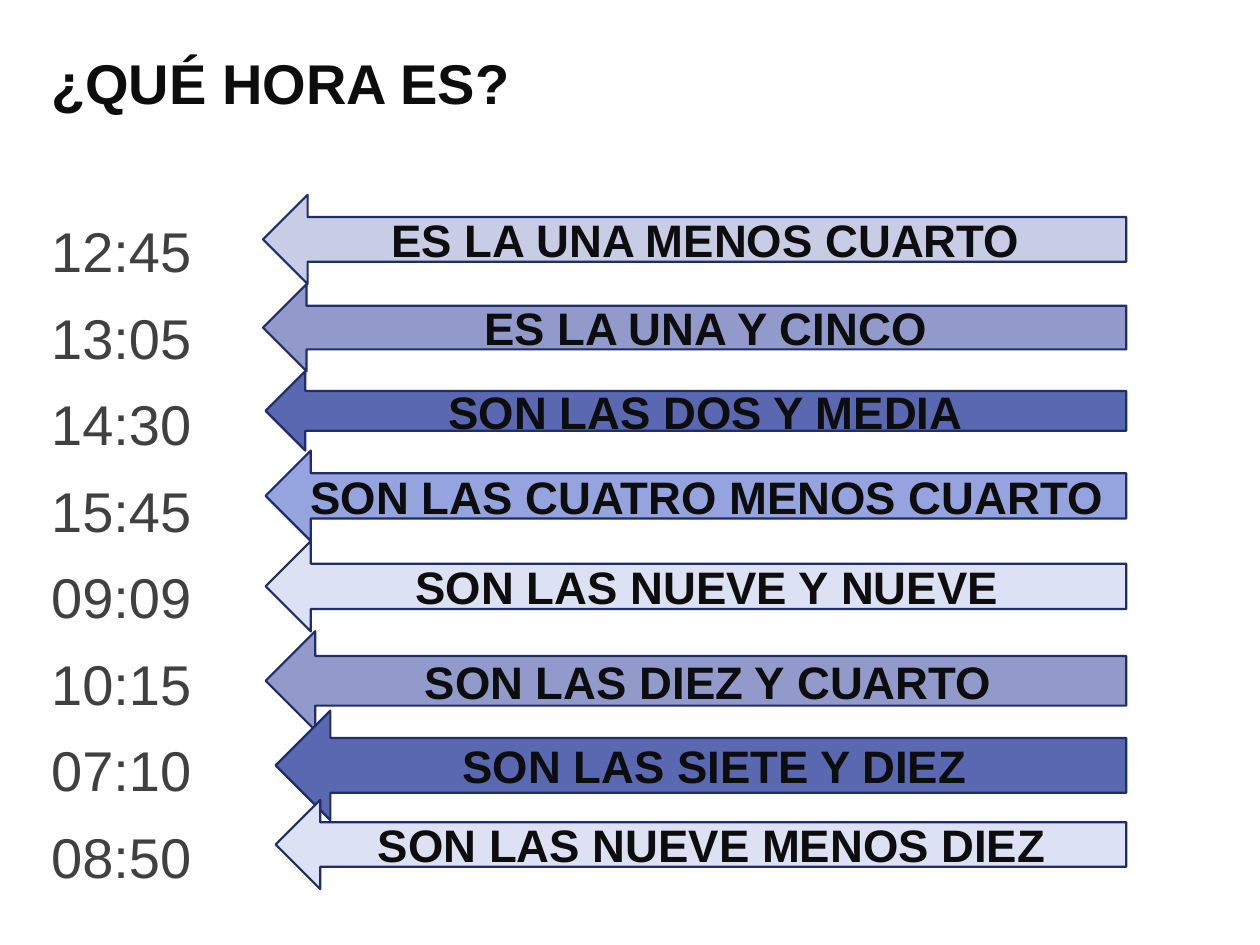
from pptx import Presentation
from pptx.dml.color import RGBColor
from pptx.enum.shapes import MSO_SHAPE
from pptx.enum.text import MSO_ANCHOR, PP_ALIGN
from pptx.util import Pt


def style(font, size, color, bold):
    font.name = "Arial"
    font.size = Pt(size)
    font.bold = bold
    font.color.rgb = rgb(color)


def rgb(color):
    return RGBColor.from_string(color)


deck = Presentation()
deck.slide_width, deck.slide_height = Pt(720), Pt(540)
slide = deck.slides.add_slide(deck.slide_layouts[6])

# Time, answer, then arrow left, top, height and fill
rows = [
    ("12:45", "ES LA UNA MENOS CUARTO", 150.3, 111.3, 51, "C8CDE5"),
    ("13:05", "ES LA UNA Y CINCO", 150.3, 162.3, 49.8, "919ACA"),
    ("14:30", "SON LAS DOS Y MEDIA", 151.8, 212.1, 45.4, "5968B0"),
    ("15:45", "SON LAS CUATRO MENOS CUARTO", 151.8, 257.5, 51.7, "95A4DE"),
    ("09:09", "SON LAS NUEVE Y NUEVE", 151.8, 309.2, 51.7, "DCE1F4"),
    ("10:15", "SON LAS DIEZ Y CUARTO", 151.8, 360.7, 56.7, "919ACA"),
    ("07:10", "SON LAS SIETE Y DIEZ", 157.5, 406.1, 62.6, "5968B0"),
    ("08:50", "SON LAS NUEVE MENOS DIEZ", 157.5, 457.1, 51, "DCE1F4"),
]
right = 643.6

# Title and the column of times
box = slide.shapes.add_textbox(Pt(20.2), Pt(20.9), Pt(680.4), Pt(493.2))
frame = box.text_frame
frame.word_wrap = True
frame.margin_left, frame.margin_top = Pt(9), Pt(6.7)
frame.text = "\n".join(["¿QUÉ HORA ES?"] + [row[0] for row in rows])
for para in frame.paragraphs:
    para.space_after = Pt(11)
    style(para.runs[0].font, 32, "404040", False)
title = frame.paragraphs[0]
title.space_after = Pt(58)
style(title.runs[0].font, 32, "0D0D0D", True)

# Arrows with the answers, all ending at the same right edge
for time, answer, left, top, height, fill in rows:
    arrow = slide.shapes.add_shape(
        MSO_SHAPE.LEFT_ARROW, Pt(left), Pt(top), Pt(right - left), Pt(height))
    arrow.shadow.inherit = False
    arrow.fill.solid()
    arrow.fill.fore_color.rgb = rgb(fill)
    arrow.line.color.rgb = rgb("1F2E69")
    arrow.line.width = Pt(1.25)
    frame = arrow.text_frame
    frame.word_wrap = True
    frame.vertical_anchor = MSO_ANCHOR.MIDDLE
    frame.text = answer
    para = frame.paragraphs[0]
    para.alignment = PP_ALIGN.CENTER
    style(para.runs[0].font, 26, "0D0D0D", True)

deck.save("out.pptx")
